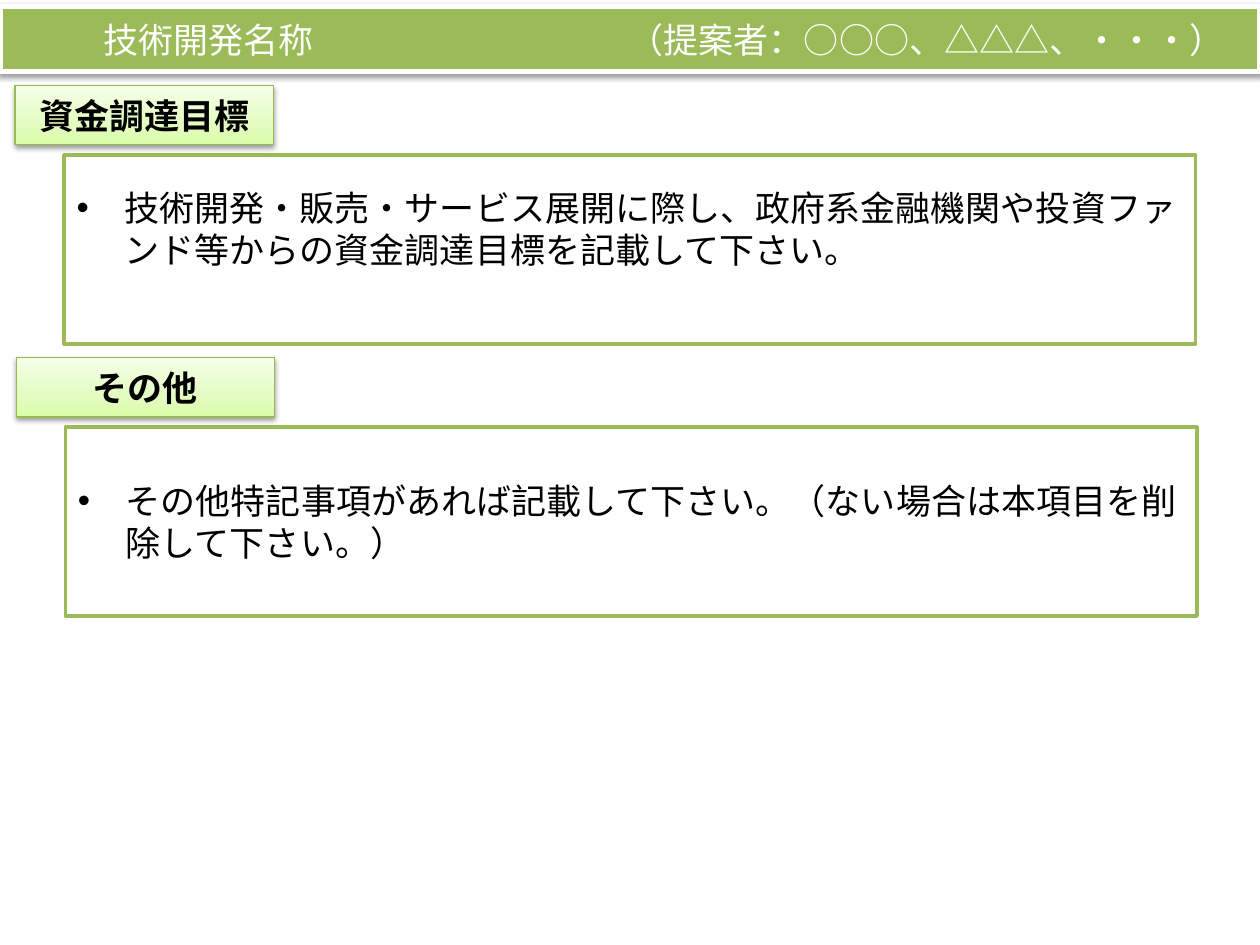
from copy import deepcopy
from dataclasses import dataclass

from lxml.etree import SubElement
from pptx import Presentation
from pptx.dml.color import RGBColor
from pptx.enum.shapes import MSO_SHAPE
from pptx.enum.text import MSO_ANCHOR, PP_ALIGN
from pptx.oxml.ns import qn
from pptx.util import Inches, Pt


@dataclass(frozen=True)
class Theme:
    font: str = "Calibri"
    text_size: int = 20
    white: str = "FFFFFF"
    black: str = "000000"
    green: str = "9BBB59"
    label_line: str = "98B955"
    label_stops: tuple = ((0, "DAFDA7"), (0.35, "E4FCC2"), (1, "F5FFE7"))


class ProposalSlide:
    def __init__(self, slide, theme):
        self.slide = slide
        self.theme = theme

    def _panel(self, left, top, width, height, fill, line, line_width):
        panel = self.slide.shapes.add_shape(
            MSO_SHAPE.RECTANGLE, Inches(left), Inches(top), Inches(width), Inches(height))
        panel.shadow.inherit = False
        panel.fill.solid()
        panel.fill.fore_color.rgb = RGBColor.from_string(fill)
        panel.line.color.rgb = RGBColor.from_string(line)
        panel.line.width = Pt(line_width)
        panel.text_frame.word_wrap = True
        panel.text_frame.vertical_anchor = MSO_ANCHOR.MIDDLE
        return panel

    def _write(self, panel, text, color, align=PP_ALIGN.LEFT, bold=False):
        paragraph = panel.text_frame.paragraphs[0]
        paragraph.alignment = align
        run = paragraph.add_run()
        run.text = text
        run.font.name = self.theme.font
        run.font.size = Pt(self.theme.text_size)
        run.font.bold = bold
        run.font.color.rgb = RGBColor.from_string(color)
        return paragraph

    def _drop_shadow(self, panel):
        effects = panel._element.spPr.find(qn("a:effectLst"))
        shadow = SubElement(effects, qn("a:outerShdw"), blurRad=str(Pt(3.1)),
                            dist=str(Pt(1.6)), dir="5400000", rotWithShape="0")
        color = SubElement(shadow, qn("a:srgbClr"), val=self.theme.black)
        SubElement(color, qn("a:alpha"), val="38000")

    def _label_gradient(self, panel):
        panel.fill.gradient()
        panel.fill.gradient_angle = 90
        stop_list = panel._element.spPr.find(qn("a:gradFill")).find(qn("a:gsLst"))
        stop_list.append(deepcopy(stop_list[0]))
        for stop, (position, color) in zip(panel.fill.gradient_stops, self.theme.label_stops):
            stop.position = position
            stop.color.rgb = RGBColor.from_string(color)

    def title_bar(self, name, proposers):
        """Name at the left, proposers at a tab stop."""
        bar = self._panel(0, 0.05, 10, 0.52, self.theme.green, self.theme.white, 3)
        self._drop_shadow(bar)
        bar.text_frame.margin_left = Inches(0.82)
        bar.text_frame.margin_right = 0
        paragraph = self._write(bar, f"{name}\t{proposers}", self.theme.white)
        tabs = SubElement(paragraph._p.get_or_add_pPr(), qn("a:tabLst"))
        SubElement(tabs, qn("a:tab"), pos=str(Inches(4.17)), algn="l")

    def label(self, left, top, text):
        label = self._panel(left, top, 2.05, 0.47, self.theme.white, self.theme.label_line, 0.75)
        self._label_gradient(label)
        self._drop_shadow(label)
        self._write(label, text, self.theme.black, PP_ALIGN.CENTER, bold=True)

    def bullet_box(self, left, top, text, space_below):
        box = self._panel(left, top, 8.98, 1.5, self.theme.white, self.theme.green, 2)
        box.text_frame.margin_bottom = Inches(space_below)
        properties = self._write(box, text, self.theme.black)._p.get_or_add_pPr()
        properties.set("marL", str(Inches(0.38)))
        properties.set("indent", str(Inches(-0.38)))
        SubElement(properties, qn("a:buFont"), typeface="Arial")
        SubElement(properties, qn("a:buChar"), char="•")

    def section(self, left, top, heading, body, space_below=0.05):
        self.label(left, top, heading)
        self.bullet_box(left + 0.39, top + 0.55, body, space_below)


def main():
    presentation = Presentation()
    presentation.slide_width = Inches(10)
    presentation.slide_height = Inches(7.5)
    slide = presentation.slides.add_slide(presentation.slide_layouts[6])

    proposal = ProposalSlide(slide, Theme())
    proposal.title_bar("技術開発名称", "（提案者：○○○、△△△、・・・）")
    proposal.section(
        0.12, 0.68, "資金調達目標",
        "技術開発・販売・サービス展開に際し、政府系金融機関や投資ファンド等からの"
        "資金調達目標を記載して下さい。",
        space_below=0.38)
    proposal.section(
        0.13, 2.84, "その他",
        "その他特記事項があれば記載して下さい。（ない場合は本項目を削除して下さい。）")
    presentation.save("out.pptx")


if __name__ == "__main__":
    main()
